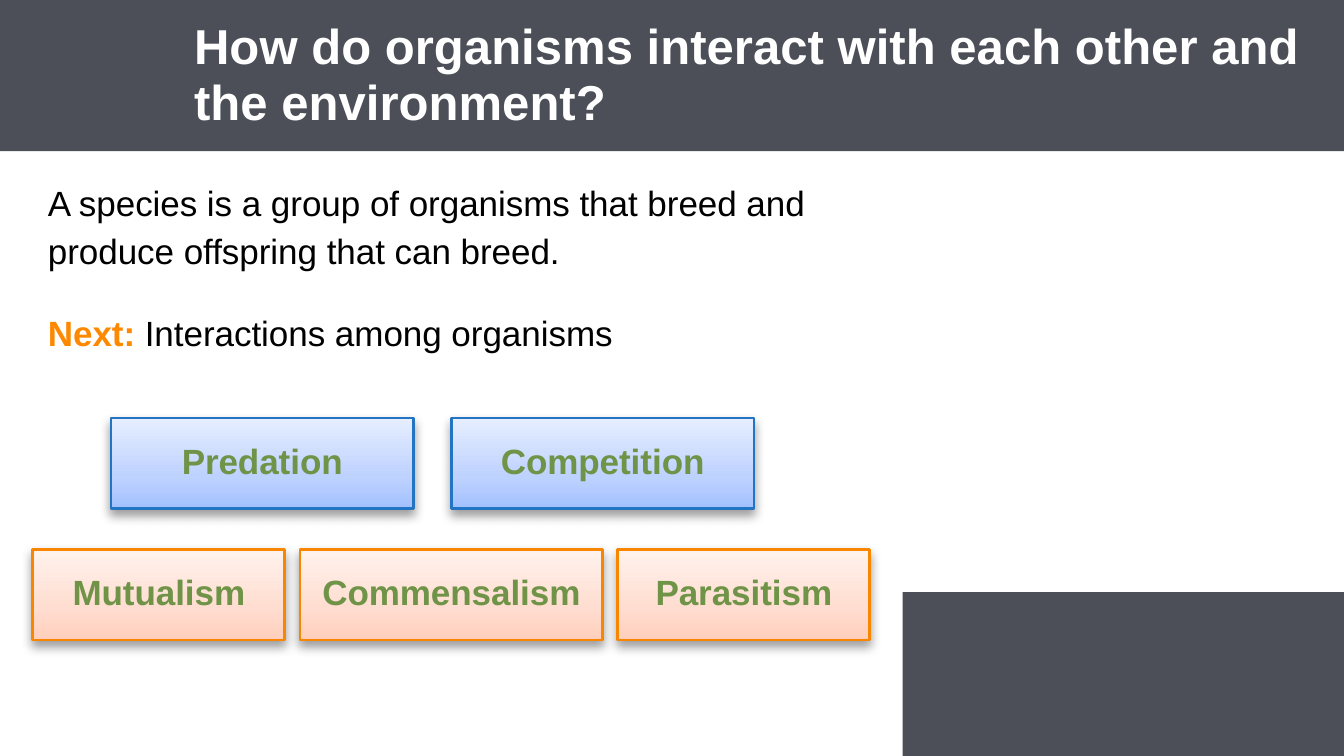
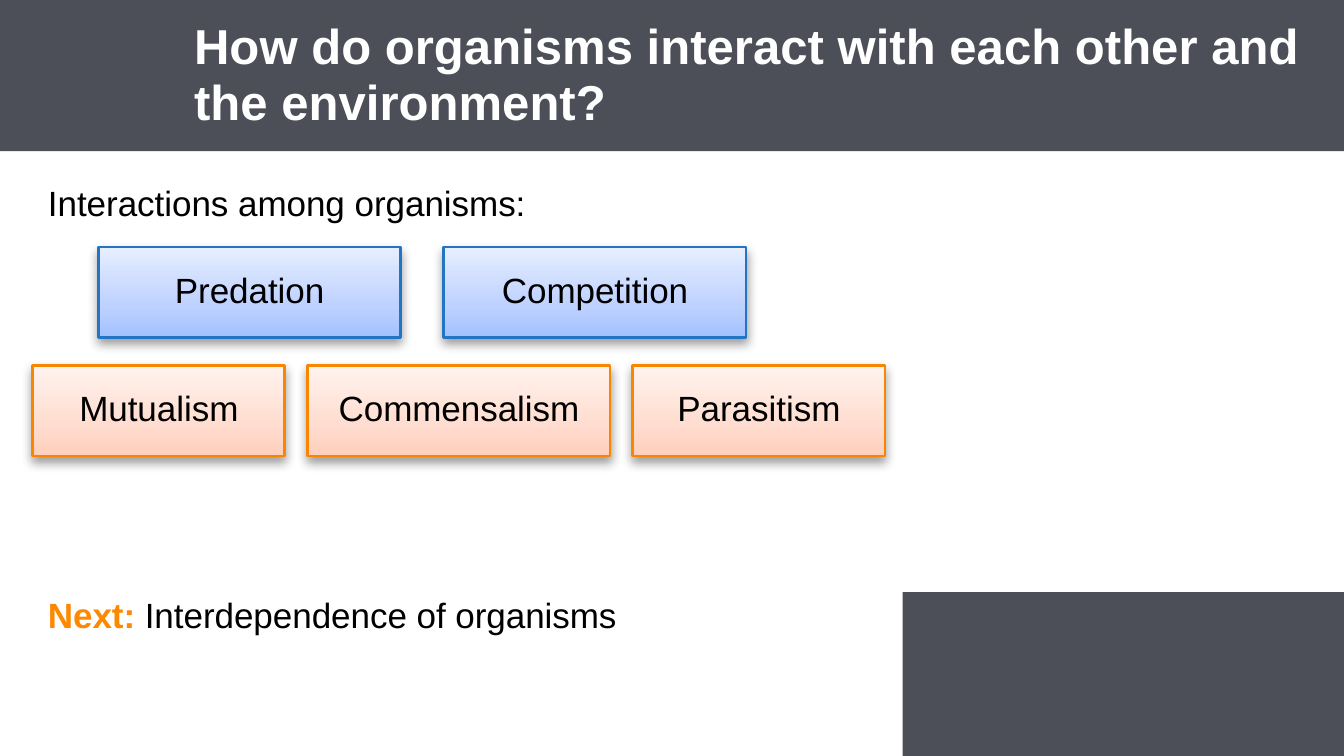
from copy import deepcopy
from dataclasses import dataclass

from lxml.etree import SubElement
from pptx import Presentation
from pptx.dml.color import RGBColor
from pptx.enum.shapes import MSO_SHAPE
from pptx.enum.text import MSO_ANCHOR, PP_ALIGN
from pptx.oxml.ns import qn
from pptx.util import Inches, Pt


@dataclass(frozen=True)
class Theme:
    font: str = "Arial"
    title_size: float = 14
    text_size: float = 10
    band: str = "4D4F58"
    white: str = "FFFFFF"
    black: str = "000000"
    accent: str = "FE8900"
    green: str = "6F9347"
    shadow: str = "000000"


THEME = Theme()
TITLE = "How do organisms interact with each other and the environment?"

# Box style: outline colour and gradient stops from bottom to top
BLUE = ("2374C3", [(0, "A3C1FF"), (0.35, "BED2FF"), (1, "E6EEFF")])
ORANGE = ("F88600", [(0, "FFCFBC"), (0.35, "FFDDD0"), (1, "FFF2ED")])

NARROW, WIDE, BOX_HEIGHT = 1.0, 1.2, 0.36
RIVALRY = [("Predation", WIDE), ("Competition", WIDE)]
SYMBIOSIS = [("Mutualism", NARROW), ("Commensalism", WIDE), ("Parasitism", NARROW)]

SLIDES = [
    {
        "intro": "A species is a group of organisms that breed and "
                 "produce offspring that can breed.",
        "next": "Interactions among organisms",
        "next_space": 10,
        "label": {"color": THEME.green, "bold": True},
        "rows": [
            {"boxes": SYMBIOSIS, "style": ORANGE, "left": 0.13, "top": 2.18, "gap": 0.06},
            {"boxes": RIVALRY, "style": BLUE, "left": 0.44, "top": 1.66, "gap": 0.15},
        ],
    },
    {
        "intro": "Interactions among organisms:",
        "next": "Interdependence of organisms",
        "next_space": 104,
        "label": {"color": THEME.black},
        "rows": [
            {"boxes": SYMBIOSIS, "style": ORANGE, "left": 0.13, "top": 1.45, "gap": 0.09},
            {"boxes": RIVALRY, "style": BLUE, "left": 0.39, "top": 0.98, "gap": 0.17},
        ],
    },
]


def rgb(value):
    return RGBColor.from_string(value)


def set_frame(shape, insets, anchor):
    frame = shape.text_frame
    frame.word_wrap = True
    frame.vertical_anchor = anchor
    (frame.margin_left, frame.margin_top,
     frame.margin_right, frame.margin_bottom) = map(Inches, insets)
    return frame


def add_text(para, text, color=THEME.black, size=THEME.text_size, bold=False,
             align=PP_ALIGN.LEFT, line_spacing=1.13, space_before=0):
    """Add one formatted span and set the format of its paragraph."""
    para.alignment = align
    para.line_spacing = line_spacing
    para.space_before = Pt(space_before)
    span = para.add_run()
    span.text = text
    span.font.name = THEME.font
    span.font.size = Pt(size)
    span.font.bold = bold
    span.font.color.rgb = rgb(color)


def add_rectangle(page, left, top, width, height):
    shape = page.shapes.add_shape(
        MSO_SHAPE.RECTANGLE, *map(Inches, (left, top, width, height)))
    shape.shadow.inherit = False
    return shape


def add_band(page, left, top, width, height):
    band = add_rectangle(page, left, top, width, height)
    band.fill.solid()
    band.fill.fore_color.rgb = rgb(THEME.band)
    band.line.fill.background()
    return band


def fill_gradient(shape, stops):
    shape.fill.gradient()
    shape.fill.gradient_angle = 90
    stop_list = shape._element.spPr.find(".//" + qn("a:gsLst"))
    while len(stop_list) < len(stops):
        stop_list.append(deepcopy(stop_list[0]))
    for stop, (position, color) in zip(shape.fill.gradient_stops, stops):
        stop.position = position
        stop.color.rgb = rgb(color)


def add_drop_shadow(shape):
    effects = shape._element.spPr.find(qn("a:effectLst"))
    shadow = SubElement(effects, qn("a:outerShdw"), blurRad=str(Pt(3.1)),
                        dist=str(Pt(1.6)), dir="5400000", rotWithShape="0")
    color = SubElement(shadow, qn("a:srgbClr"), val=THEME.shadow)
    SubElement(color, qn("a:alpha"), val="38000")


def add_row(page, label, boxes, style, left, top, gap):
    outline, stops = style
    for name, width in boxes:
        box = add_rectangle(page, left, top, width, BOX_HEIGHT)
        fill_gradient(box, stops)
        box.line.color.rgb = rgb(outline)
        box.line.width = Pt(0.75)
        add_drop_shadow(box)
        frame = set_frame(box, [0.06] * 4, MSO_ANCHOR.MIDDLE)
        add_text(frame.paragraphs[0], name, align=PP_ALIGN.CENTER,
                 line_spacing=0.9, **label)
        left += width + gap


def add_body(page, content):
    body = page.shapes.add_textbox(*map(Inches, (0.19, 0.6, 3.39, 2.24)))
    frame = set_frame(body, (0, 0.1, 0.18, 0.02), MSO_ANCHOR.TOP)
    add_text(frame.paragraphs[0], content["intro"], space_before=10)
    para = frame.add_paragraph()
    space = content["next_space"]
    add_text(para, "Next: ", color=THEME.accent, bold=True, space_before=space)
    add_text(para, content["next"], space_before=space)


def add_page(deck, content):
    page = deck.slides.add_slide(deck.slide_layouts[6])
    add_band(page, 3.58, 2.35, 1.75, 0.65)
    header = add_band(page, 0, 0, 5.33, 0.6)
    frame = set_frame(header, (0.77, 0.07, 0.17, 0.07), MSO_ANCHOR.MIDDLE)
    add_text(frame.paragraphs[0], TITLE, color=THEME.white,
             size=THEME.title_size, bold=True, line_spacing=0.95)
    add_body(page, content)
    for row in content["rows"]:
        add_row(page, content["label"], **row)


def main():
    deck = Presentation()
    deck.slide_width, deck.slide_height = Inches(5.33), Inches(3)
    for content in SLIDES:
        add_page(deck, content)
    deck.save("out.pptx")


if __name__ == "__main__":
    main()
